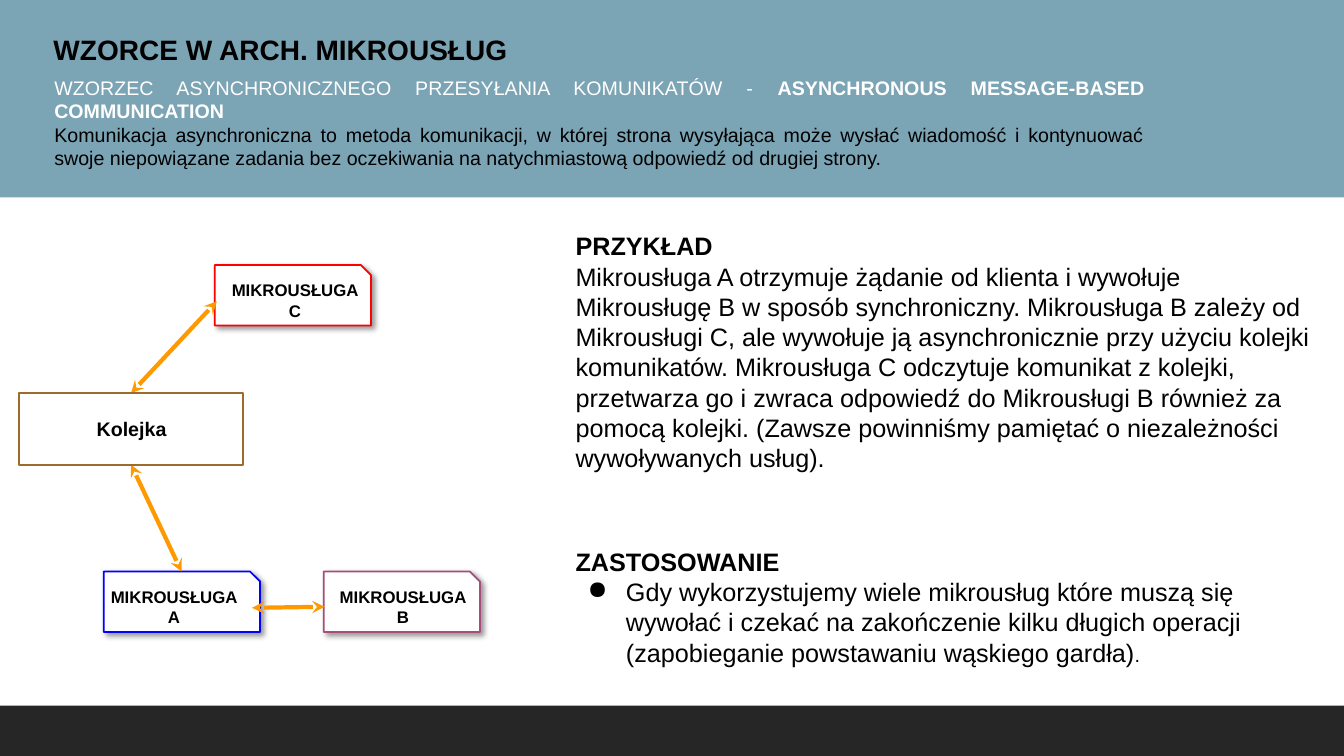
from dataclasses import dataclass
from lxml import etree
from pptx import Presentation
from pptx.dml.color import RGBColor as RGB
from pptx.enum.shapes import MSO_CONNECTOR as LINE, MSO_SHAPE as FORM
from pptx.enum.text import MSO_ANCHOR as ANCHOR, MSO_AUTO_SIZE as FIT, PP_ALIGN as ALIGN
from pptx.oxml.ns import qn
from pptx.util import Inches, Pt


@dataclass(frozen=True)
class Theme:
    font: str = "Arial"
    black: str = "000000"
    white: str = "FFFFFF"
    band: str = "7BA4B5"
    foot: str = "262626"
    red: str = "FF0000"
    blue: str = "0000FF"
    plum: str = "A64D79"
    brown: str = "9C6B2D"
    arrow: str = "FF9900"
    title: int = 20
    body: int = 18
    lead: int = 14
    label: int = 12


theme = Theme()
pres = Presentation()
pres.slide_width, pres.slide_height = Inches(13.33), Inches(7.5)
slide = pres.slides.add_slide(pres.slide_layouts[5])
shapes = slide.shapes


def draw(form, box, fill=None, line=None):
    shape = shapes.add_shape(form, *map(Inches, box))
    shape.shadow.inherit = False
    if fill:
        shape.fill.solid()
        shape.fill.fore_color.rgb = RGB.from_string(fill)
    else:
        shape.fill.background()
    if line:
        shape.line.color.rgb = RGB.from_string(line)
        shape.line.width = Pt(1.25)
    else:
        shape.line.fill.background()
    return shape


def write(shape, box, paras, align=ALIGN.LEFT):
    """Place a text shape and fill it; a run is (text, size, colour, bold)."""
    shape.left, shape.top, shape.width, shape.height = map(Inches, box)
    frame = shape.text_frame
    frame.word_wrap = True
    frame.auto_size = FIT.NONE
    frame.vertical_anchor = ANCHOR.TOP
    for i, runs in enumerate(paras):
        para = frame.paragraphs[0] if i == 0 else frame.add_paragraph()
        para.alignment = align
        for text, size, color, bold in runs:
            run = para.add_run()
            run.text = text
            run.font.name = theme.font
            run.font.size = Pt(size)
            run.font.bold = bold
            run.font.color.rgb = RGB.from_string(color)
    return frame


# Bands and heading
foot = draw(FORM.RECTANGLE, (0, 7, 13.33, 0.5), theme.foot)
band = draw(FORM.RECTANGLE, (0, 0, 13.33, 1.96), theme.band)
title = shapes.title
for bar in (foot, band):
    title.element.addprevious(bar.element)
write(title, (0.43, 0.27, 6.74, 0.44),
      [[("WZORCE W ARCH. MIKROUSŁUG", theme.title, theme.black, True)]])

# Text blocks
example = (0.0, 0.0, 1, 1)
write(shapes.add_textbox(0, 0, 0, 0), (5.61, 2.24, 7.55, 3.13), [
    [("PRZYKŁAD", theme.body, theme.black, True)],
    [("Mikrousługa A otrzymuje żądanie od klienta i wywołuje Mikrousługę B "
      "w sposób synchroniczny. Mikrousługa B zależy od Mikrousługi C, ale "
      "wywołuje ją asynchronicznie przy użyciu kolejki komunikatów. "
      "Mikrousługa C odczytuje komunikat z kolejki, przetwarza go i zwraca "
      "odpowiedź do Mikrousługi B również za pomocą kolejki. (Zawsze "
      "powinniśmy pamiętać o niezależności wywoływanych usług).",
      theme.body, theme.black, False)],
])
usage = write(shapes.add_textbox(0, 0, 0, 0), (5.61, 5.37, 7.55, 1.31), [
    [("ZASTOSOWANIE", theme.body, theme.black, True)],
    [("Gdy wykorzystujemy wiele mikrousług które muszą się wywołać i czekać "
      "na zakończenie kilku długich operacji (zapobieganie powstawaniu "
      "wąskiego gardła)", theme.body, theme.black, False),
     (".", theme.lead, theme.black, False)],
])
props = usage.paragraphs[1].runs[0].font
item = usage.paragraphs[1]._p.get_or_add_pPr()
item.set("marL", str(Inches(0.5)))
item.set("indent", str(Inches(-0.38)))
etree.SubElement(item, qn("a:buChar")).set("char", "●")

write(shapes.add_textbox(0, 0, 0, 0), (0.44, 0.7, 11.01, 1.04), [
    [("WZORZEC ASYNCHRONICZNEGO PRZESYŁANIA KOMUNIKATÓW - ",
      theme.lead, theme.white, False),
     ("ASYNCHRONOUS MESSAGE-BASED COMMUNICATION", theme.lead, theme.white, True)],
    [("Komunikacja asynchroniczna to metoda komunikacji, w której strona "
      "wysyłająca może wysłać wiadomość i kontynuować swoje niepowiązane "
      "zadania bez oczekiwania na natychmiastową odpowiedź od drugiej strony.",
      theme.lead, theme.black, False)],
], ALIGN.JUSTIFY)

# Service cards: name, left, top, label left, outline
cards = [
    ("C", 2.13, 2.63, 2.15, theme.red),
    ("A", 1.03, 5.67, 0.95, theme.blue),
    ("B", 3.21, 5.67, 3.22, theme.plum),
]
for name, left, top, start, color in cards:
    card = draw(FORM.SNIP_1_RECTANGLE, (left, top, 1.55, 0.6), theme.white, color)
    card.adjustments[0] = 0.167
    effects = card.element.spPr.find(qn("a:effectLst"))
    shade = etree.SubElement(effects, qn("a:outerShdw"), blurRad=str(Pt(4)),
                             dist=str(Pt(3)), dir=str(45 * 60000),
                             algn="tl", rotWithShape="0")
    tint = etree.SubElement(shade, qn("a:srgbClr"), val=theme.black)
    etree.SubElement(tint, qn("a:alpha"), val="40000")
    write(shapes.add_textbox(0, 0, 0, 0), (start, top + 0.1, 1.55, 0.5),
          [[(f"MIKROUSŁUGA {name}", theme.label, theme.black, True)]], ALIGN.CENTER)

# Two-way arrows
for ends in [(1.3, 3.9, 2.15, 2.99), (1.3, 4.61, 1.8, 5.67), (2.5, 6.03, 3.22, 6.02)]:
    arrow = shapes.add_connector(LINE.STRAIGHT, *map(Inches, ends))
    arrow.line.color.rgb = RGB.from_string(theme.arrow)
    arrow.line.width = Pt(3)
    stroke = arrow.line._get_or_add_ln()
    for tag in ("a:headEnd", "a:tailEnd"):
        etree.SubElement(stroke, qn(tag), type="stealth")
    etree.SubElement(arrow.element.spPr, qn("a:effectLst"))

# Queue
draw(FORM.RECTANGLE, (0.19, 3.9, 2.22, 0.71), line=theme.brown)
write(shapes.add_textbox(0, 0, 0, 0), (0.73, 4.09, 1.15, 0.34),
      [[("Kolejka", theme.lead, theme.black, True)]], ALIGN.CENTER)

pres.save("out.pptx")
